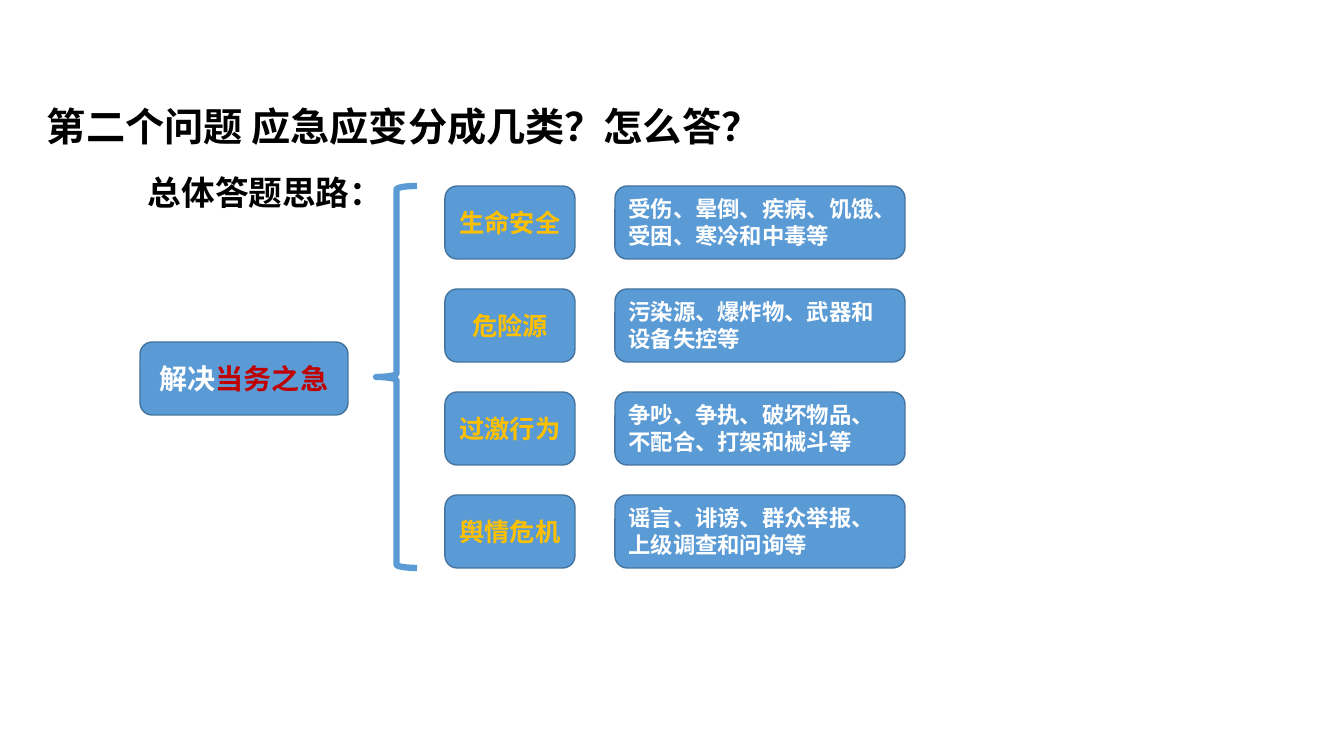
from pptx import Presentation
from pptx.dml.color import RGBColor
from pptx.enum.shapes import MSO_SHAPE
from pptx.enum.text import MSO_ANCHOR, PP_ALIGN
from pptx.util import Pt
from lxml import etree

ROUNDED = MSO_SHAPE.ROUNDED_RECTANGLE
BRACE = MSO_SHAPE.LEFT_BRACE
TOP, MIDDLE = MSO_ANCHOR.TOP, MSO_ANCHOR.MIDDLE
LEFT, CENTER = PP_ALIGN.LEFT, PP_ALIGN.CENTER

SLIDE_W, SLIDE_H = 1344, 756
SCALE = 12192000 / SLIDE_W
CJK_FONT = "Noto Sans CJK SC"
COLORS = {
    "black": "000000",
    "white": "FFFFFF",
    "blue": "5B9BD5",
    "edge": "43739E",
    "gold": "FFC000",
    "red": "C00000",
}
DRAWING_NS = "http://schemas.openxmlformats.org/drawingml/2006/main"

ROW_TOP, ROW_PITCH, BOX_H = 186, 103, 73
CATEGORIES = [
    ("生命安全", "受伤、晕倒、疾病、饥饿、受困、寒冷和中毒等"),
    ("危险源", "污染源、爆炸物、武器和设备失控等"),
    ("过激行为", "争吵、争执、破坏物品、不配合、打架和械斗等"),
    ("舆情危机", "谣言、诽谤、群众举报、上级调查和问询等"),
]


def px(length):
    return round(length * SCALE)


def color(name):
    return RGBColor.from_string(COLORS[name])


def write(frame, runs, size, font="Calibri", align=LEFT, anchor=MIDDLE, indent=0, spacing=None):
    frame.word_wrap = True
    frame.vertical_anchor = anchor
    paragraph = frame.paragraphs[0]
    paragraph.alignment = align
    if spacing:
        paragraph.line_spacing = spacing
    if indent:
        paragraph._p.get_or_add_pPr().set("indent", str(px(indent)))
    for text, ink in runs:
        run = paragraph.add_run()
        run.text = text
        run.font.size = Pt(size)
        run.font.bold = True
        run.font.color.rgb = color(ink)
        run.font.name = font
        east_asian = etree.SubElement(run.font._element, f"{{{DRAWING_NS}}}ea")
        east_asian.set("typeface", CJK_FONT)


class Diagram:
    """Draws the elements of one slide in a shared style."""

    def __init__(self, slide):
        self.shapes = slide.shapes

    def label(self, x, y, w, h, runs, size, **style):
        holder = self.shapes.add_textbox(px(x), px(y), px(w), px(h))
        write(holder.text_frame, runs, size, font=CJK_FONT, **style)

    def box(self, x, y, w, runs, size, **style):
        card = self.shapes.add_shape(ROUNDED, px(x), px(y), px(w), px(BOX_H))
        card.shadow.inherit = False
        card.fill.solid()
        card.fill.fore_color.rgb = color("blue")
        card.line.color.rgb = color("edge")
        card.line.width = Pt(1)
        write(card.text_frame, runs, size, **style)

    def brace(self, x, y, w, h):
        bracket = self.shapes.add_shape(BRACE, px(x), px(y), px(w), px(h))
        bracket.shadow.inherit = False
        bracket.fill.background()
        bracket.line.color.rgb = color("blue")
        bracket.line.width = Pt(4.5)


def main():
    deck = Presentation()
    deck.slide_width, deck.slide_height = px(SLIDE_W), px(SLIDE_H)
    diagram = Diagram(deck.slides.add_slide(deck.slide_layouts[6]))

    diagram.label(37, 97, 899, 57, [("第二个问题 应急应变分成几类？怎么答？", "black")], 28)
    diagram.label(37, 147, 1256, 534, [("总体答题思路：", "black")], 24,
                  anchor=TOP, indent=101, spacing=1.5)
    diagram.box(140, 342, 208, [("解决", "white"), ("当务之急", "red")], 20, align=CENTER)
    diagram.brace(376, ROW_TOP, 41, ROW_PITCH * (len(CATEGORIES) - 1) + BOX_H)

    for row, (category, examples) in enumerate(CATEGORIES):
        top = ROW_TOP + row * ROW_PITCH
        diagram.box(445, top, 130, [(category, "gold")], 18, align=CENTER)
        diagram.box(615, top, 290, [(examples, "white")], 16)

    deck.save("out.pptx")


if __name__ == "__main__":
    main()
